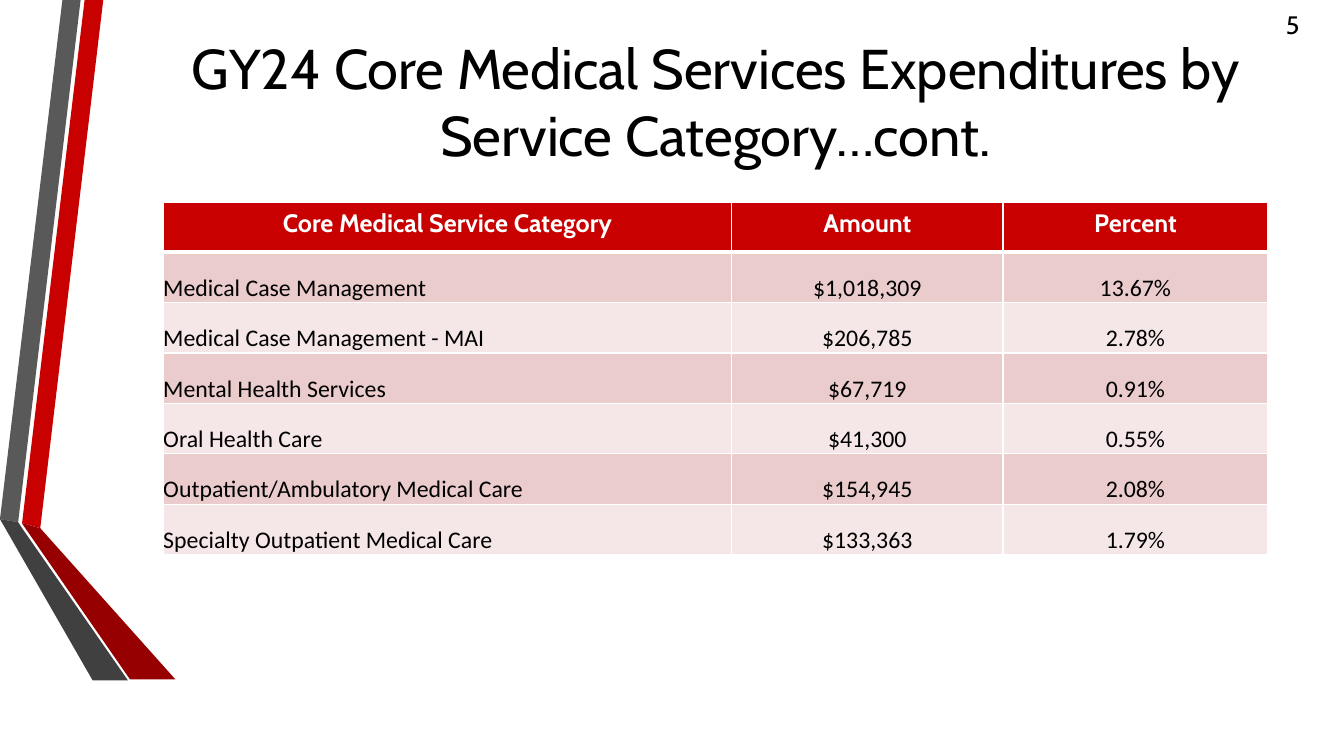
from lxml import etree
from pptx import Presentation
from pptx import util as u
from pptx.dml.color import RGBColor
from pptx.enum import text
from pptx.oxml import ns

Pt = u.Pt
RED = RGBColor(0xC8, 0x00, 0x00)
DARK_RED = RGBColor(0x96, 0x00, 0x00)
GRAY = RGBColor(0x59, 0x59, 0x59)
DARK_GRAY = RGBColor(0x40, 0x40, 0x40)
ROSE = RGBColor(0xEB, 0xCC, 0xCC)
PALE_ROSE = RGBColor(0xF5, 0xE7, 0xE7)
BLACK = RGBColor(0x00, 0x00, 0x00)
WHITE = RGBColor(0xFF, 0xFF, 0xFF)
CENTER = text.PP_ALIGN.CENTER

deck = Presentation()
deck.slide_width, deck.slide_height = Pt(960), Pt(540)
page = deck.slides.add_slide(deck.slide_layouts[6])


def style(para, words, font, size, color, align=None, bold=False):
    para.text = words
    para.alignment = align
    para.font.name = font
    para.font.size = Pt(size)
    para.font.color.rgb = color
    para.font.bold = bold


def add_border(cell, side, width):
    line = etree.Element(ns.qn(f"a:ln{side}"), w=str(Pt(width)))
    fill = etree.SubElement(line, ns.qn("a:solidFill"))
    etree.SubElement(fill, ns.qn("a:srgbClr"), val=str(WHITE))
    cell._tc.get_or_add_tcPr().append(line)


# Folded ribbons on the left
ribbons = [
    (RED, [(15.8, 373.7), (28.8, 377.3), (73.8, 0), (60.5, 0)]),
    (GRAY, [(57.6, 0), (44.6, 0), (0, 370.8), (13, 373)]),
    (DARK_RED, [(15.8, 374), (92.9, 485.3), (125.3, 485.3), (28.8, 377.3), (15.8, 373.7)]),
    (DARK_GRAY, [(91.4, 486), (15.8, 377.3), (13, 373), (0, 370.8), (66.2, 486)]),
]
for color, points in ribbons:
    corners = [(Pt(x), Pt(y)) for x, y in points]
    outline = page.shapes.build_freeform(*corners[0])
    outline.add_line_segments(corners[1:], close=True)
    ribbon = outline.convert_to_shape()
    ribbon.shadow.inherit = False
    ribbon.fill.solid()
    ribbon.fill.fore_color.rgb = color
    ribbon.line.fill.background()

# Page number and title
labels = [
    ("5", (911.5, 2.9, 48.2, 29), 18, None, text.MSO_ANCHOR.TOP),
    ("GY24 Core Medical Services Expenditures by Service Category…cont.",
     (116.6, 2.9, 789.1, 138.2), 40, CENTER, text.MSO_ANCHOR.MIDDLE),
]
for words, place, size, align, anchor in labels:
    box = page.shapes.add_textbox(*map(Pt, place))
    box.text_frame.word_wrap = True
    box.text_frame.vertical_anchor = anchor
    style(box.text_frame.paragraphs[0], words, "Cabin", size, BLACK, align)

# Expenditure table
rows = [
    ("Core Medical Service Category", "Amount", "Percent"),
    ("Medical Case Management", "$1,018,309", "13.67%"),
    ("Medical Case Management - MAI", "$206,785", "2.78%"),
    ("Mental Health Services", "$67,719", "0.91%"),
    ("Oral Health Care", "$41,300", "0.55%"),
    ("Outpatient/Ambulatory Medical Care", "$154,945", "2.08%"),
    ("Specialty Outpatient Medical Care", "$133,363", "1.79%"),
]
widths = [406.1, 193.7, 189.3]
table = page.shapes.add_table(
    len(rows), len(widths), Pt(116.6), Pt(144.9), Pt(789.1), Pt(251.3)).table
for column, width in zip(table.columns, widths):
    column.width = Pt(width)

for r, row in enumerate(rows):
    header = r == 0
    table.rows[r].height = Pt(35.3 if header else 36)
    for c, words in enumerate(row):
        cell = table.cell(r, c)
        for side in "LRTB":
            thick = (header and side == "B") or (r == 1 and side == "T")
            add_border(cell, side, 3 if thick else 1)
        cell.fill.solid()
        para = cell.text_frame.paragraphs[0]
        if header:
            cell.fill.fore_color.rgb = RED
            style(para, words, "Cabin", 18, WHITE, CENTER, bold=True)
        else:
            cell.fill.fore_color.rgb = ROSE if r % 2 else PALE_ROSE
            cell.vertical_anchor = text.MSO_ANCHOR.BOTTOM
            cell.margin_left = cell.margin_right = 0
            cell.margin_top = cell.margin_bottom = 0
            style(para, words, "Calibri", 17, BLACK, CENTER if c else None)

deck.save("out.pptx")
